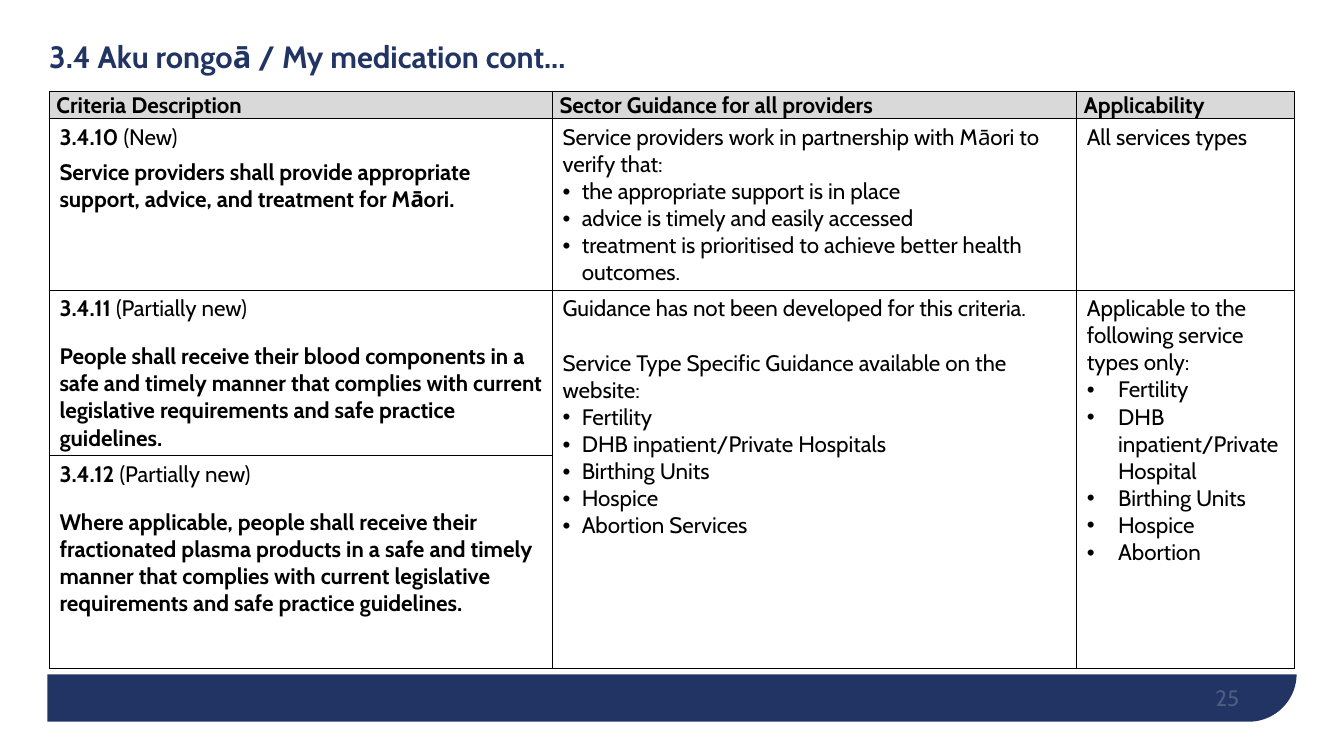
from typing import NamedTuple

from lxml import etree
from pptx import Presentation
from pptx import util as u
from pptx.dml.color import RGBColor
from pptx.enum import shapes, text
from pptx.oxml.ns import qn

PX = 9144
FONT = "Cabin"
NAVY, WHITE, BLACK, GREY = "213463", "FFFFFF", "000000", "D9D9D9"


class Run(NamedTuple):
    words: str
    bold: bool = False


class Para(NamedTuple):
    runs: list[Run]
    before: float = 0
    after: float = 0
    indent: int = 0


class Cell(NamedTuple):
    row: int
    col: int
    paras: list[Para]
    head: bool = False
    span: int = 1


def px(n: int) -> u.Emu:
    return u.Emu(n * PX)


def color(code: str) -> RGBColor:
    return RGBColor.from_string(code)


def plain(words: str, before: float = 0) -> Para:
    return Para([Run(words)], before)


def items(indent: int, *names: str) -> list[Para]:
    return [Para([Run(name)], indent=indent) for name in names]


def rule(code: str, state: str, words: str, after: int = 9) -> list[Para]:
    return [Para([Run(code + " ", True), Run(state)], after=after),
            Para([Run(words, True)], before=6)]


def add_run(para, run: Run, size: int = 16, code: str = BLACK):
    part = para.add_run()
    part.text = run.words
    font = part.font
    font.name, font.size, font.bold = FONT, u.Pt(size), run.bold
    font.color.rgb = color(code)
    return part


def write(frame, paras: list[Para]) -> None:
    for n, item in enumerate(paras):
        para = frame.add_paragraph() if n else frame.paragraphs[0]
        para.space_before, para.space_after = u.Pt(item.before), u.Pt(item.after)
        if item.indent:
            props = para._p.get_or_add_pPr()
            props.set("marL", str(px(item.indent)))
            props.set("indent", str(-px(item.indent)))
            face = etree.SubElement(props, qn("a:buFont"))
            face.set("typeface", "Arial")
            etree.SubElement(props, qn("a:buChar")).set("char", "•")
        for run in item.runs:
            add_run(para, run)


def border(cell) -> None:
    props = cell._tc.get_or_add_tcPr()
    for side in "LRTB":
        line = etree.SubElement(props, qn(f"a:ln{side}"), w=str(u.Pt(1)))
        fill = etree.SubElement(line, qn("a:solidFill"))
        etree.SubElement(fill, qn("a:srgbClr"), val=BLACK)


def add_shape(slide, kind, box: tuple[int, ...], code: str):
    shape = slide.shapes.add_shape(kind, *map(px, box))
    shape.shadow.inherit = False
    shape.fill.solid()
    shape.fill.fore_color.rgb = color(code)
    shape.line.fill.background()
    return shape


def add_box(slide, box: tuple[int, ...], anchor):
    frame = slide.shapes.add_textbox(*map(px, box)).text_frame
    frame.word_wrap = True
    frame.vertical_anchor = anchor
    return frame


def add_base(slide) -> None:
    bar = add_shape(slide, shapes.MSO_SHAPE.ROUND_1_RECTANGLE, (47, 37, 1239, 679), NAVY)
    bar.adjustments[0] = 0.07
    bar.rotation = 180
    bar._element.spPr.xfrm.set("flipH", "1")
    add_shape(slide, shapes.MSO_SHAPE.RECTANGLE, (0, 0, 1333, 669), WHITE)
    frame = add_box(slide, (929, 665, 300, 40), text.MSO_ANCHOR.BOTTOM)
    frame.margin_left = frame.margin_right = frame.margin_top = frame.margin_bottom = 0
    para = frame.paragraphs[0]
    para.alignment = text.PP_ALIGN.RIGHT
    page = add_run(para, Run("25"), code=WHITE)
    tint = page._r.find(".//" + qn("a:srgbClr"))
    etree.SubElement(tint, qn("a:alpha"), val="20000")


def add_title(slide) -> None:
    frame = add_box(slide, (39, 0, 1150, 117), text.MSO_ANCHOR.MIDDLE)
    para = frame.paragraphs[0]
    para.line_spacing = 0.9
    add_run(para, Run("3.4 Aku rongoā / My medication cont...", True), 22, NAVY)


def add_grid(slide, cells: list[Cell]) -> None:
    cols, rows = (499, 520, 216), (27, 163, 161, 211)
    table = slide.shapes.add_table(
        len(rows), len(cols), px(49), px(91), px(sum(cols)), px(sum(rows))).table
    table.first_row = table.horz_banding = False
    for col, wide in zip(table.columns, cols):
        col.width = px(wide)
    for row, high in zip(table.rows, rows):
        row.height = px(high)
    for cell in table.iter_cells():
        border(cell)
        cell.fill.background()
    for item in cells:
        cell = table.cell(item.row, item.col)
        if item.span > 1:
            cell.merge(table.cell(item.row + item.span - 1, item.col))
        if item.head:
            cell.fill.solid()
            cell.fill.fore_color.rgb = color(GREY)
            cell.vertical_anchor = text.MSO_ANCHOR.MIDDLE
            cell.margin_left = cell.margin_right = px(7)
            cell.margin_top = cell.margin_bottom = 0
        write(cell.text_frame, item.paras)


HEADS = ("Criteria Description", "Sector Guidance for all providers", "Applicability")
CELLS = [Cell(0, n, [Para([Run(head, True)])], head=True) for n, head in enumerate(HEADS)] + [
    Cell(1, 0, rule("3.4.10", "(New)", "Service providers shall provide appropriate "
                    "support, advice, and treatment for Māori.", after=0)),
    Cell(1, 1, [plain("Service providers work in partnership with Māori to verify that:"),
                *items(19, "the appropriate support is in place",
                       "advice is timely and easily accessed",
                       "treatment is prioritised to achieve better health outcomes.")]),
    Cell(1, 2, [plain("All services types")]),
    Cell(2, 0, rule("3.4.11", "(Partially new)", "People shall receive their blood "
                    "components in a safe and timely manner that complies with current "
                    "legislative requirements and safe practice guidelines.")),
    Cell(2, 1, [plain("Guidance has not been developed for this criteria."),
                plain("Service Type Specific Guidance available on the website:", 19.5),
                *items(19, "Fertility", "DHB inpatient/Private Hospitals", "Birthing Units",
                       "Hospice", "Abortion Services")], span=2),
    Cell(2, 2, [plain("Applicable to the following service types only:"),
                *items(31, "Fertility", "DHB inpatient/Private Hospital", "Birthing Units",
                       "Hospice", "Abortion")], span=2),
    Cell(3, 0, rule("3.4.12", "(Partially new)", "Where applicable, people shall receive "
                    "their fractionated plasma products in a safe and timely manner that "
                    "complies with current legislative requirements and safe practice "
                    "guidelines.")),
]


def main() -> None:
    """Build the medication criteria slide."""
    deck = Presentation()
    deck.slide_width, deck.slide_height = px(1333), px(750)
    slide = deck.slides.add_slide(deck.slide_layouts[6])
    add_base(slide)
    add_title(slide)
    add_grid(slide, CELLS)
    deck.save("out.pptx")


if __name__ == "__main__":
    main()
